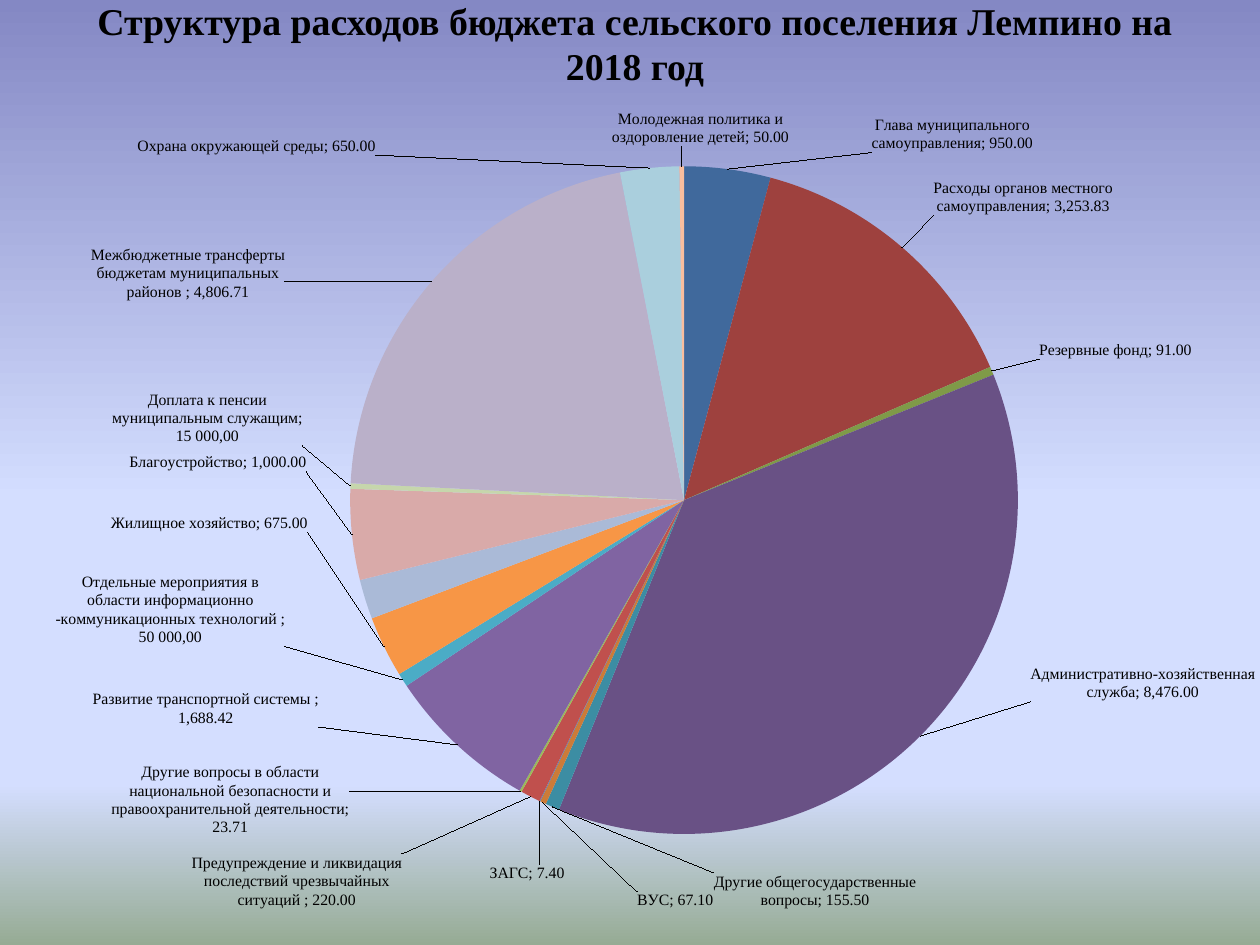
import math
from pptx import Presentation, util as u
from pptx.chart.data import CategoryChartData
from pptx.dml.color import RGBColor
from pptx.enum import chart as ch, text
from pptx.oxml import parse_xml
from pptx.oxml.ns import nsdecls, qn

theme = {
    "ink": "000000",
    "face": "Times New Roman",
    "title": 21.6,
    "label": 9,
    "back": [(0, "8488C4"), (53, "D4DEFF"), (83, "D4DEFF"), (100, "96AB94")],
    "wedge": [
        "40699C", "9E413E", "7F9A48", "695185", "3C8DA3", "CC7B38",
        "4F81BD", "C0504D", "9BBB59", "8064A2", "4BACC6", "F79646",
        "AABAD7", "D9AAA9", "C6D6AC", "BAB0C9", "AACFDD", "F9BE9E",
    ],
}

rows = [
    ("Глава муниципального самоуправления", 950, (6.92, 1.21)),
    ("Расходы органов местного самоуправления", 3253.83, (7.41, 1.71)),
    ("Резервные фонд", 91, (8.25, 2.85)),
    ("Административно-хозяйственная служба", 8476, (8.18, 5.28)),
    ("Другие общегосударственные вопросы", 155.5, (7.27, 6.93)),
    ("ВУС", 67.1, (5.66, 7.08)),
    ("ЗАГС", 7.4, (4.48, 6.86)),
    ("Предупреждение и ликвидация последствий чрезвычайных ситуаций ", 220, (3.19, 6.78)),
    ("Другие вопросы в области национальной безопасности и правоохранительной деятельности",
     23.71, (2.77, 6.06)),
    ("Развитие транспортной системы ", 1688.42, (2.53, 5.48)),
    (["Отдельные мероприятия в", "области информационно",
      "-коммуникационных технологий ;", "50 000,00"], 150, (2.26, 4.55)),
    ("Жилищное хозяйство", 675, (2.44, 4.08)),
    ("", 434.8, None),
    ("Благоустройство", 1000, (2.43, 3.6)),
    (["Доплата к пенсии", "муниципальным служащим;", "15 000,00"], 60, (2.4, 3.32)),
    ("Межбюджетные трансферты бюджетам муниципальных районов ", 4806.71, (2.26, 2.39)),
    ("Охрана окружающей среды", 650, (2.98, 1.23)),
    ("Молодежная политика и оздоровление детей", 50, (5.56, 1.16)),
]
narrow = {8: 0.17, 16: 0.17}

deck = Presentation()
deck.slide_width, deck.slide_height = u.Inches(10), u.Inches(7.5)
slide = deck.slides.add_slide(deck.slide_layouts[5])

fill = slide.background.fill
fill.gradient()
fill.gradient_angle = 270
stops = "".join(
    f'<a:gs pos="{pos * 1000}"><a:srgbClr val="{tone}"/></a:gs>' for pos, tone in theme["back"])
old = next(slide._element.iter(qn("a:gsLst")))
old.getparent().replace(old, parse_xml(f'<a:gsLst {nsdecls("a")}>{stops}</a:gsLst>'))

title = slide.shapes.title
place = {"left": 0.51, "top": 0.36, "width": 9.06, "height": 0.39}
for key, size in place.items():
    setattr(title, key, u.Inches(size))
frame = title.text_frame
frame.text = "Структура расходов бюджета сельского поселения Лемпино на 2018 год"
for key, val in {"word_wrap": True, "auto_size": text.MSO_AUTO_SIZE.NONE,
                 "vertical_anchor": text.MSO_ANCHOR.BOTTOM}.items():
    setattr(frame, key, val)
para = frame.paragraphs[0]
para.alignment = text.PP_ALIGN.CENTER
font = para.runs[0].font
for key, val in {"name": theme["face"], "size": u.Pt(theme["title"]), "bold": True}.items():
    setattr(font, key, val)
font.color.rgb = RGBColor.from_string(theme["ink"])

data = CategoryChartData(number_format="#,##0.00")
data.categories = [
    " ".join(name[:-1]).rstrip(";") if isinstance(name, list) else name for name, *rest in rows]
data.add_series("Series 1", [row[1] for row in rows])
left, top, wide, high = 0.44, 0.84, 9.53, 6.38
chart = slide.shapes.add_chart(
    ch.XL_CHART_TYPE.PIE, *map(u.Inches, (left, top, wide, high)), data).chart
chart.has_legend = chart.has_title = False
chart.font.name, chart.font.size = "Calibri", u.Pt(18)
chart.font.color.rgb = RGBColor.from_string(theme["ink"])
plot = chart.plots[0]
plot.vary_by_categories = True
pie = plot.series[0]
for num, tone in enumerate(theme["wedge"]):
    part = pie.points[num].format
    part.fill.solid()
    part.fill.fore_color.rgb = RGBColor.from_string(tone)
    part.line.fill.background()

mid_x, mid_y, rad = 5.43, 3.97, 2.65
spot = {"x": (mid_x - rad - left) / wide, "y": (mid_y - rad - top) / high,
        "w": 2 * rad / wide, "h": 2 * rad / high}
box = "".join(f'<c:{key} val="{val:.4f}"/>' for key, val in spot.items())
area = chart._chartSpace.chart.plotArea
for node in area.findall(qn("c:layout")):
    area.remove(node)
area.insert(0, parse_xml(
    f'<c:layout {nsdecls("c")}><c:manualLayout><c:layoutTarget val="inner"/>'
    f'<c:xMode val="edge"/><c:yMode val="edge"/>{box}</c:manualLayout></c:layout>'))

look = (f'sz="{theme["label"] * 100}" b="0"><a:solidFill><a:srgbClr val="{theme["ink"]}"/>'
        f'</a:solidFill><a:latin typeface="{theme["face"]}"/>')
style = ('<c:numFmt formatCode="#,##0.00" sourceLinked="0"/><c:spPr><a:noFill/><a:ln><a:noFill/></a:ln></c:spPr>'
         f'<c:txPr><a:bodyPr/><a:p><a:pPr><a:defRPr {look}</a:defRPr></a:pPr></a:p></c:txPr>')
show = ('<c:dLblPos val="outEnd"/><c:showLegendKey val="0"/><c:showVal val="1"/><c:showCatName val="1"/>'
        '<c:showSerName val="0"/><c:showPercent val="0"/><c:showBubbleSize val="0"/>'
        '<c:separator>; </c:separator>')
total = sum(row[1] for row in rows)
done, items, reach = 0, "", rad + 0.06
for num, (name, value, goal) in enumerate(rows):
    turn = 2 * math.pi * (done + value / 2) / total
    done += value
    if goal is None:
        items += f'<c:dLbl><c:idx val="{num}"/><c:delete val="1"/></c:dLbl>'
        continue
    dx = (goal[0] - mid_x - reach * math.sin(turn)) / wide
    dy = (goal[1] - mid_y + reach * math.cos(turn)) / high
    words = extra = ""
    if isinstance(name, list):
        lines = "".join(f'<a:p><a:r><a:rPr lang="ru-RU" {look}</a:rPr><a:t>{line}</a:t></a:r></a:p>'
                        for line in name)
        words = f'<c:tx><c:rich><a:bodyPr/>{lines}</c:rich></c:tx>'
    if num in narrow:
        extra = ('<c:extLst><c:ext uri="{CE6537A1-D6FC-4f65-9D91-7224C49458BB}" '
                 'xmlns:c15="http://schemas.microsoft.com/office/drawing/2012/chart"><c15:layout>'
                 f'<c:manualLayout><c:w val="{narrow[num]}"/><c:h val="0.09"/></c:manualLayout>'
                 '</c15:layout></c:ext></c:extLst>')
    items += (f'<c:dLbl><c:idx val="{num}"/><c:layout><c:manualLayout><c:x val="{dx:.4f}"/>'
              f'<c:y val="{dy:.4f}"/></c:manualLayout></c:layout>{words}{style}{show}{extra}</c:dLbl>')
labels = parse_xml(f'<c:dLbls {nsdecls("c", "a")}>{items}{style}{show}'
                   '<c:showLeaderLines val="1"/></c:dLbls>')
pie._element.find(qn("c:cat")).addprevious(labels)

deck.save("out.pptx")
